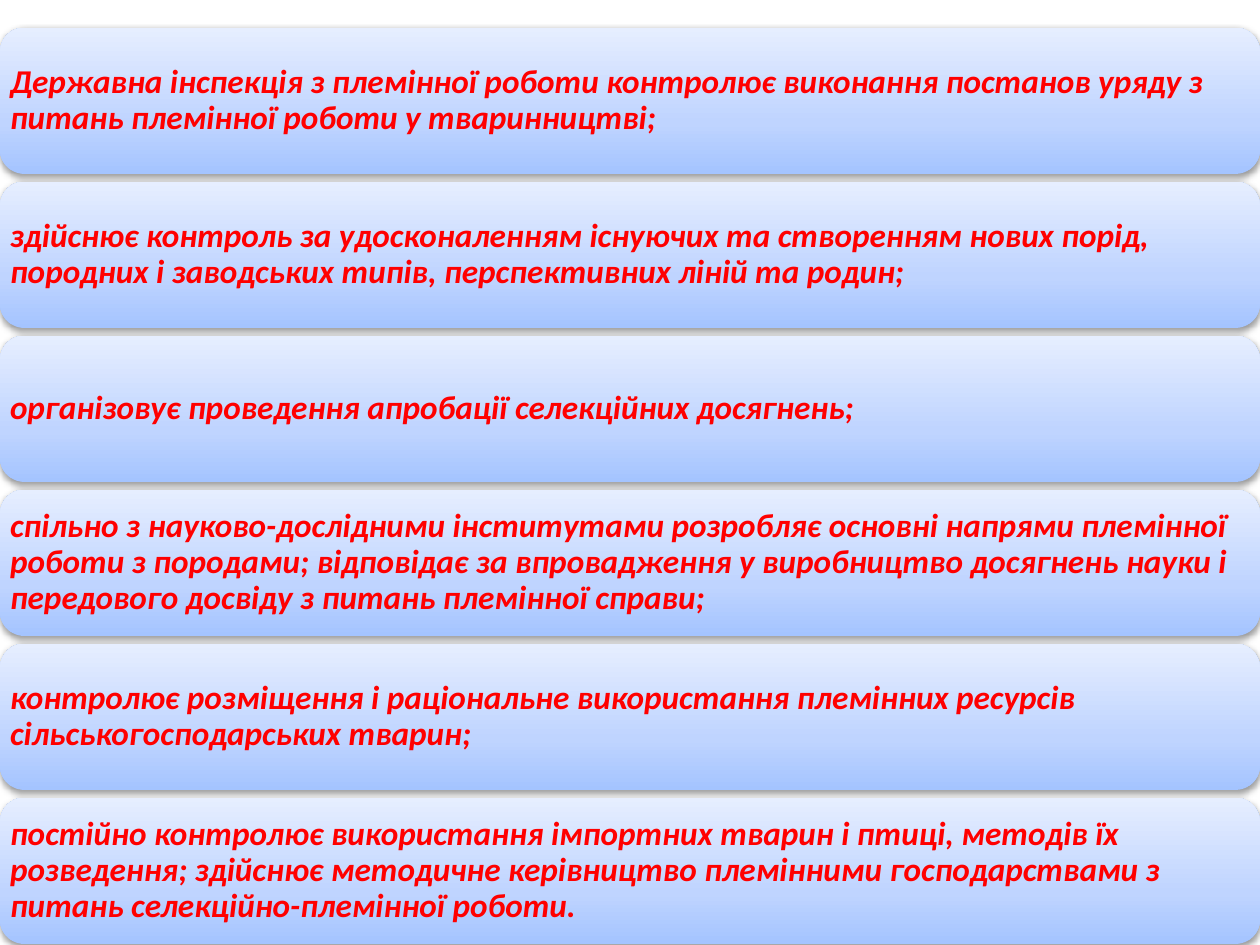
"""Build a slide listing the duties of the state breeding inspection."""
import copy
import pptx
import pptx.util
import pptx.dml.color
import pptx.enum.shapes
import pptx.enum.text
import pptx.oxml
import pptx.oxml.ns

DUTIES = [
    "Державна інспекція з племінної роботи контролює виконання постанов уряду з питань племінної роботи у тваринництві;",
    "здійснює контроль за удосконаленням існуючих та створенням нових порід, породних і заводських типів, перспективних ліній та родин;",
    "організовує проведення апробації селекційних досягнень;",
    "спільно з науково-дослідними інститутами розробляє основні напрями племінної роботи з породами; відповідає за впровадження у виробництво досягнень науки і передового досвіду з питань племінної справи;",
    "контролює розміщення і раціональне використання племінних ресурсів сільськогосподарських тварин;",
    "постійно контролює використання імпортних тварин і птиці, методів їх розведення; здійснює методичне керівництво племінними господарствами з питань селекційно-племінної роботи.",
]
THEME = {
    "font": "Calibri",
    "size": 19,
    "text": "FF0000",
    "shade": "000000",
    "stops": [(0, "A4C4FF"), (0.35, "BFD4FF"), (1, "E6EEFF")],
}
WIDE, HIGH = 720, 540
TOP, BAR, GAP = 15.8, 83.6, 4.4
INSET = 1.7

Pt = pptx.util.Pt
qn = pptx.oxml.ns.qn


def shade(bar):
    """Give the bar its three-stop gradient and soft drop shadow."""
    bar.fill.gradient()
    bar.fill.gradient_angle = 90
    stops = bar._element.spPr.find(".//" + qn("a:gsLst"))
    stops.insert(1, copy.deepcopy(stops[0]))
    for stop, (place, tint) in zip(bar.fill.gradient_stops, THEME["stops"]):
        stop.position = place
        stop.color.rgb = pptx.dml.color.RGBColor.from_string(tint)
    bar.line.fill.background()
    bar.shadow.inherit = False
    glow = pptx.oxml.parse_xml(
        f'<a:outerShdw {pptx.oxml.ns.nsdecls("a")} blurRad="{Pt(3.1)}" '
        f'dist="{Pt(1.6)}" dir="5400000" rotWithShape="0">'
        f'<a:srgbClr val="{THEME["shade"]}"><a:alpha val="38000"/></a:srgbClr>'
        "</a:outerShdw>"
    )
    bar._element.spPr.find(qn("a:effectLst")).append(glow)


def write(bar, words):
    """Set the duty's wording in the bar."""
    frame = bar.text_frame
    frame.word_wrap = True
    frame.vertical_anchor = pptx.enum.text.MSO_ANCHOR.MIDDLE
    frame.margin_left = frame.margin_right = Pt(INSET)
    frame.margin_top = frame.margin_bottom = Pt(INSET)
    para = frame.paragraphs[0]
    para.alignment = pptx.enum.text.PP_ALIGN.LEFT
    para.line_spacing = 0.9
    run = para.add_run()
    run.text = words
    font = run.font
    font.name, font.size = THEME["font"], Pt(THEME["size"])
    font.bold = font.italic = True
    font.color.rgb = pptx.dml.color.RGBColor.from_string(THEME["text"])


def main():
    """Stack one bar per duty and save the deck."""
    deck = pptx.Presentation()
    deck.slide_width, deck.slide_height = Pt(WIDE), Pt(HIGH)
    slide = deck.slides.add_slide(deck.slide_layouts[6])
    kind = pptx.enum.shapes.MSO_SHAPE.ROUNDED_RECTANGLE
    for row, words in enumerate(DUTIES):
        top = TOP + row * (BAR + GAP)
        bar = slide.shapes.add_shape(kind, Pt(0), Pt(top), Pt(WIDE), Pt(BAR))
        shade(bar)
        write(bar, words)
    deck.save("out.pptx")


if __name__ == "__main__":
    main()
